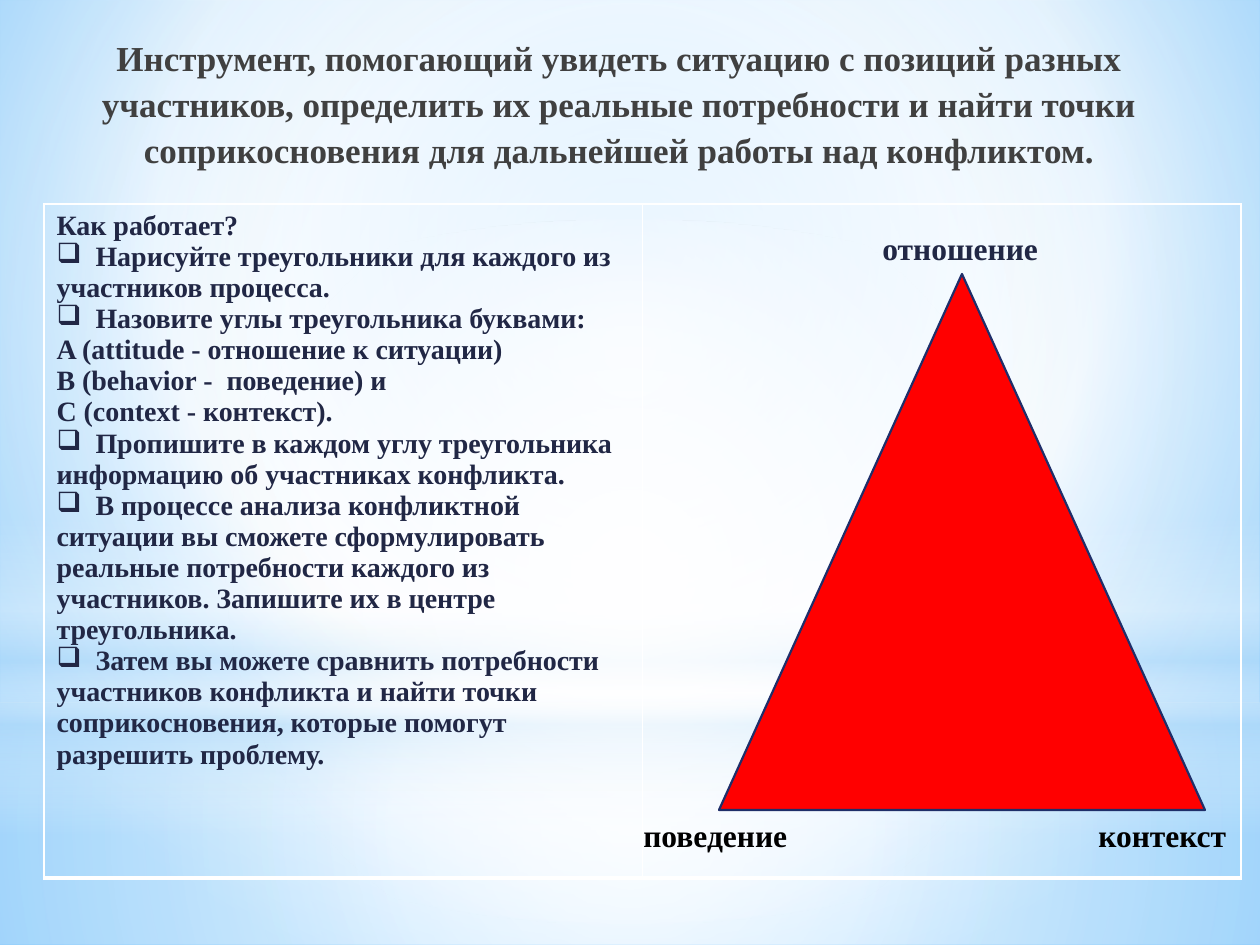
from dataclasses import dataclass

from lxml import etree
from pptx import Presentation
from pptx.dml.color import RGBColor
from pptx.enum.shapes import MSO_SHAPE
from pptx.enum.text import MSO_ANCHOR, PP_ALIGN
from pptx.oxml.ns import qn
from pptx.util import Emu, Pt

RECT, OVAL = MSO_SHAPE.RECTANGLE, MSO_SHAPE.OVAL
TRIANGLE = MSO_SHAPE.ISOSCELES_TRIANGLE
LEFT, CENTER = PP_ALIGN.LEFT, PP_ALIGN.CENTER
TOP = MSO_ANCHOR.TOP
WIDE, HIGH = 1260, 945


@dataclass(frozen=True)
class Theme:
    font: str = "Times New Roman"
    head: str = "404040"
    ink: str = "212745"
    black: str = "000000"
    white: str = "FFFFFF"
    sky: str = "B4DCFA"
    red: str = "FF0000"
    edge: str = "1F2E69"
    title: int = 20
    label: int = 18
    body: int = 16


T = Theme()

TITLE = ("Инструмент, помогающий увидеть ситуацию с позиций разных участников, "
         "определить их реальные потребности и найти точки соприкосновения "
         "для дальнейшей работы над конфликтом.")
INTRO = "Как работает?"
# The first line of each step has a bullet
STEPS = [
    ["Нарисуйте треугольники для каждого из", "участников процесса."],
    ["Назовите углы треугольника буквами:", "A (attitude - отношение к ситуации)",
     "B (behavior -  поведение) и", "C (context - контекст)."],
    ["Пропишите в каждом углу треугольника", "информацию об участниках конфликта."],
    ["В процессе анализа конфликтной", "ситуации вы сможете сформулировать",
     "реальные потребности каждого из", "участников. Запишите их в центре",
     "треугольника."],
    ["Затем вы можете сравнить потребности", "участников конфликта и найти точки",
     "соприкосновения, которые помогут", "разрешить проблему."],
]


def px(n):
    return Emu(round(n * 914400 / 126))


def rgb(code):
    return RGBColor.from_string(code)


def node(root, tag, **attrs):
    return etree.SubElement(root, qn(tag), {k: str(v) for k, v in attrs.items()})


def blend(fill, root, stops, to=None):
    """Gradient of (place, colour, opacity): round towards `to`, else downwards."""
    fill.gradient()
    grad = root.find(".//" + qn("a:gradFill"))
    for child in list(grad):
        grad.remove(child)
    row = node(grad, "a:gsLst")
    for place, code, alpha in stops:
        stop = node(row, "a:gs", pos=place * 1000)
        tint = node(stop, "a:srgbClr", val=code)
        if alpha < 100:
            node(tint, "a:alpha", val=alpha * 1000)
    if to:
        ring = node(grad, "a:path", path="circle")
        node(ring, "a:fillToRect", **{s: v * 1000 for s, v in zip("ltrb", to)})
    else:
        node(grad, "a:lin", ang=90 * 60000, scaled=0)


def form(slide, kind, box):
    shape = slide.shapes.add_shape(kind, *map(px, box))
    shape.shadow.inherit = False
    return shape


def write(para, text, size=T.body, color=T.ink, align=LEFT, space=None, bullet=False):
    run = para.add_run()
    run.text = text
    run.font.name, run.font.size, run.font.bold = T.font, Pt(size), True
    run.font.color.rgb = rgb(color)
    para.alignment = align
    if space:
        para.line_spacing = space
    if bullet:
        props = para._p.get_or_add_pPr()
        props.set("marL", str(px(39)))
        props.set("indent", str(-px(39)))
        node(props, "a:buChar", char="❑")


def label(slide, box, text, wrap=False, **look):
    frame = slide.shapes.add_textbox(*map(px, box)).text_frame
    frame.word_wrap, frame.vertical_anchor = wrap, TOP
    write(frame.paragraphs[0], text, **look)


def scene(slide, box):
    x, y, w, h = box
    white, sky = T.white, T.sky
    blend(slide.background.fill, slide.element,
          [(0, "9ED5FF", 100), (60, white, 100), (100, "5BB9FF", 100)],
          (20, 10, 20, 60))
    mid = (50, 50, 50, 50)
    split = 703
    layers = [
        # Ground
        (RECT, split, h - split, mid,
         [(0, white, 91), (37, white, 76), (100, sky, 79)]),
        # Sky
        (RECT, 0, split, mid,
         [(0, white, 89), (48, white, 62), (100, sky, 79)]),
        # Horizon
        (RECT, 519, 315, None,
         [(0, white, 0), (29, white, 30), (45, sky, 40), (55, white, 26),
          (65, sky, 60), (100, white, 0)]),
        # Glow
        (OVAL, 220, split, mid, [(0, white, 100), (56, white, 0)]),
    ]
    for kind, top, tall, to, stops in layers:
        shape = form(slide, kind, (x, y + top, w, tall))
        blend(shape.fill, shape.element, stops, to)
        shape.line.fill.background()


def frame(cell):
    props = cell._tc.get_or_add_tcPr()
    for side, width in zip("LRTB", (1, 1, 1, 3)):
        line = node(props, "a:ln" + side, w=Pt(width))
        node(node(line, "a:solidFill"), "a:srgbClr", val=T.white)
    cell.fill.background()


def guide(slide, box):
    x, y, w, h = map(px, box)
    table = slide.shapes.add_table(1, 2, x, y, w, h).table
    table.first_row = table.horz_banding = False
    table.rows[0].height = h
    for col, cell in zip(table.columns, table.rows[0].cells):
        col.width = w // 2
        frame(cell)
    text = table.cell(0, 0).text_frame
    write(text.paragraphs[0], INTRO)
    for step in STEPS:
        for i, line in enumerate(step):
            write(text.add_paragraph(), line, bullet=i == 0)


def corners(slide, box):
    x, y, w, h = box
    shape = form(slide, TRIANGLE, (x + 88, y + 51, 486, 536))
    shape.fill.solid()
    shape.fill.fore_color.rgb = rgb(T.red)
    shape.line.color.rgb = rgb(T.edge)
    shape.line.width = Pt(1.25)
    # Corner names
    names = [("отношение", 239, 0, 183, T.ink),
             ("поведение", 0, 587, 176, T.black),
             ("контекст", 455, 587, 155, T.black)]
    for text, left, top, wide, color in names:
        label(slide, (x + left, y + top, wide, 50), text, size=T.label, color=color)


def main():
    deck = Presentation()
    deck.slide_width, deck.slide_height = px(WIDE), px(HIGH)
    slide = deck.slides.add_slide(deck.slide_layouts[6])
    scene(slide, (0, 0, WIDE, HIGH))
    label(slide, (44, 26, 1150, 158), TITLE, wrap=True, size=T.title,
          color=T.head, align=CENTER, space=1.1)
    guide(slide, (44, 204, 1197, 674))
    corners(slide, (631, 223, 610, 637))
    deck.save("out.pptx")


if __name__ == "__main__":
    main()
